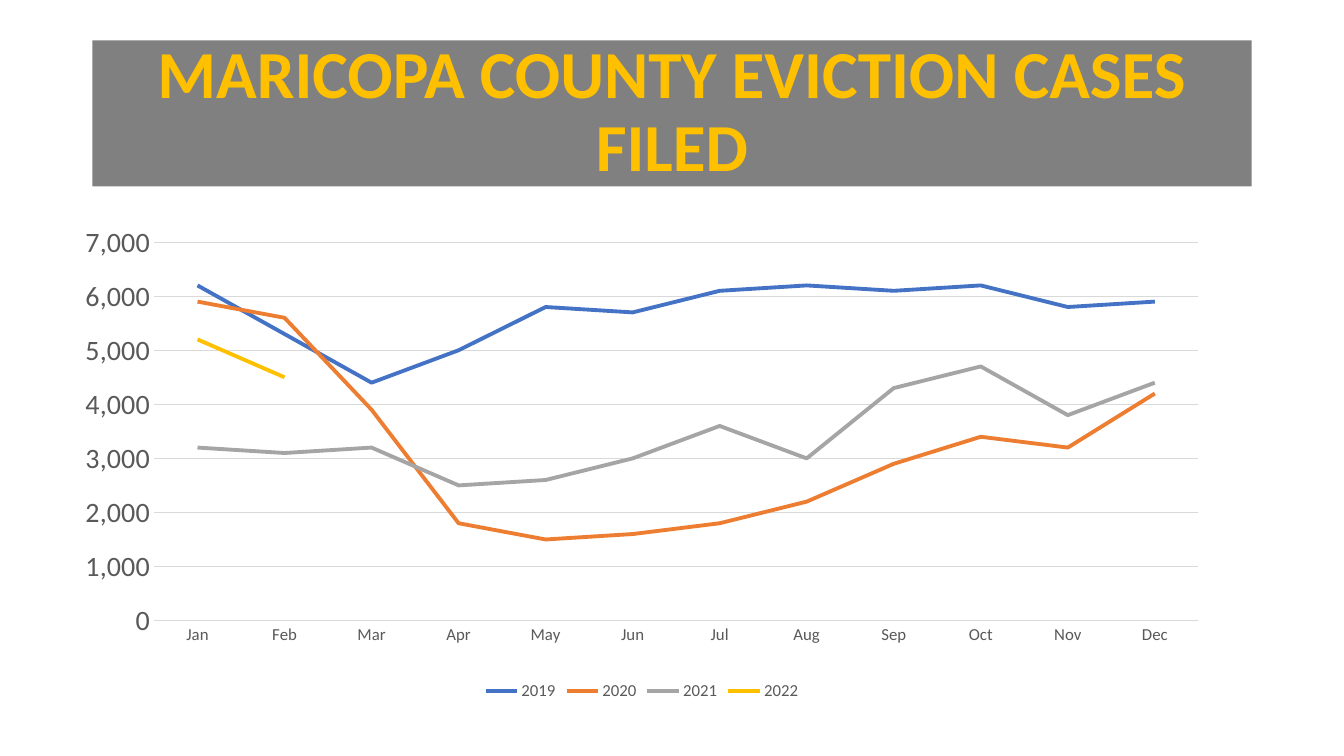
from dataclasses import dataclass

from lxml import etree
from pptx import Presentation
from pptx.chart.data import CategoryChartData
from pptx.dml.color import RGBColor
from pptx.enum.chart import XL_CHART_TYPE, XL_LEGEND_POSITION, XL_MARKER_STYLE, XL_TICK_MARK
from pptx.enum.text import MSO_ANCHOR, MSO_AUTO_SIZE, PP_ALIGN
from pptx.oxml.ns import qn
from pptx.util import Pt

LINE_CHART = XL_CHART_TYPE.LINE
LEGEND_BOTTOM = XL_LEGEND_POSITION.BOTTOM
NO_MARKER = XL_MARKER_STYLE.NONE
NO_TICK = XL_TICK_MARK.NONE
MIDDLE = MSO_ANCHOR.MIDDLE
NO_AUTOFIT = MSO_AUTO_SIZE.NONE
CENTER = PP_ALIGN.CENTER

FONT = "Calibri"
GOLD = "FFC000"
TITLE_GRAY = "808080"
LABEL_GRAY = "595959"
GRID_GRAY = "D9D9D9"
MONTHS = ["Jan", "Feb", "Mar", "Apr", "May", "Jun",
          "Jul", "Aug", "Sep", "Oct", "Nov", "Dec"]


@dataclass
class YearSeries:
    year: str
    color: str
    cases: list[int]


YEARS = [
    YearSeries("2019", "4472C4", [6200, 5300, 4400, 5000, 5800, 5700,
                                  6100, 6200, 6100, 6200, 5800, 5900]),
    YearSeries("2020", "ED7D31", [5900, 5600, 3900, 1800, 1500, 1600,
                                  1800, 2200, 2900, 3400, 3200, 4200]),
    YearSeries("2021", "A5A5A5", [3200, 3100, 3200, 2500, 2600, 3000,
                                  3600, 3000, 4300, 4700, 3800, 4400]),
    YearSeries("2022", GOLD, [5200, 4500]),
]


def rgb(color: str) -> RGBColor:
    return RGBColor.from_string(color)


def style_font(font, size: float, color: str, bold: bool = False) -> None:
    font.name = FONT
    font.size = Pt(size)
    font.bold = bold
    font.color.rgb = rgb(color)


def style_line(line, color: str, width: float) -> None:
    line.color.rgb = rgb(color)
    line.width = Pt(width)


def place_plot(chart, left: float, top: float, width: float, height: float) -> None:
    """Fix the inner plot area, in fractions of the chart's size."""
    plot_area = chart._chartSpace.chart.plotArea
    for old_layout in plot_area.findall(qn("c:layout")):
        plot_area.remove(old_layout)
    layout = etree.Element(qn("c:layout"))
    manual = etree.SubElement(layout, qn("c:manualLayout"))
    settings = [("layoutTarget", "inner"), ("xMode", "edge"), ("yMode", "edge"),
                ("x", left), ("y", top), ("w", width), ("h", height)]
    for name, value in settings:
        etree.SubElement(manual, qn(f"c:{name}")).set("val", str(value))
    plot_area.insert(0, layout)


def add_title(slide) -> None:
    title = slide.shapes.title
    title.left, title.top, title.width, title.height = Pt(66), Pt(28.8), Pt(828), Pt(104.4)
    title.fill.solid()
    title.fill.fore_color.rgb = rgb(TITLE_GRAY)
    frame = title.text_frame
    frame.word_wrap = True
    frame.auto_size = NO_AUTOFIT
    frame.vertical_anchor = MIDDLE
    paragraph = frame.paragraphs[0]
    paragraph.alignment = CENTER
    paragraph.line_spacing = 0.9
    run = paragraph.add_run()
    run.text = "MARICOPA COUNTY EVICTION CASES FILED"
    style_font(run.font, 48, GOLD, bold=True)


def add_cases_chart(slide) -> None:
    data = CategoryChartData(number_format="#,##0")
    data.categories = MONTHS
    for entry in YEARS:
        missing = [None] * (len(MONTHS) - len(entry.cases))
        data.add_series(entry.year, entry.cases + missing)
    chart = slide.shapes.add_chart(
        LINE_CHART, Pt(44.6), Pt(160.6), Pt(828), Pt(342.7), data).chart
    chart.has_title = False
    style_font(chart.font, 10, "000000")
    place_plot(chart, 0.079, 0.036, 0.901, 0.789)

    # Lines
    plot = chart.plots[0]
    plot.vary_by_categories = False
    for series, entry in zip(plot.series, YEARS):
        series.smooth = False
        series.marker.style = NO_MARKER
        style_line(series.format.line, entry.color, 2.75)

    # Axes
    months, cases = chart.category_axis, chart.value_axis
    for axis, size in ((months, 12), (cases, 20)):
        axis.major_tick_mark = NO_TICK
        axis.minor_tick_mark = NO_TICK
        style_font(axis.tick_labels.font, size, LABEL_GRAY)
    style_line(months.format.line, GRID_GRAY, 1)
    cases.format.line.fill.background()
    cases.minimum_scale, cases.maximum_scale, cases.major_unit = 0, 7000, 1000
    cases.tick_labels.number_format = "#,##0"
    cases.tick_labels.number_format_is_linked = False
    style_line(cases.major_gridlines.format.line, GRID_GRAY, 0.75)

    # Legend
    chart.has_legend = True
    chart.legend.position = LEGEND_BOTTOM
    chart.legend.include_in_layout = False
    style_font(chart.legend.font, 12, LABEL_GRAY)


def main() -> None:
    presentation = Presentation()
    presentation.slide_width, presentation.slide_height = Pt(960), Pt(540)
    slide = presentation.slides.add_slide(presentation.slide_layouts.get_by_name("Title Only"))
    add_title(slide)
    add_cases_chart(slide)
    presentation.save("out.pptx")


if __name__ == "__main__":
    main()
